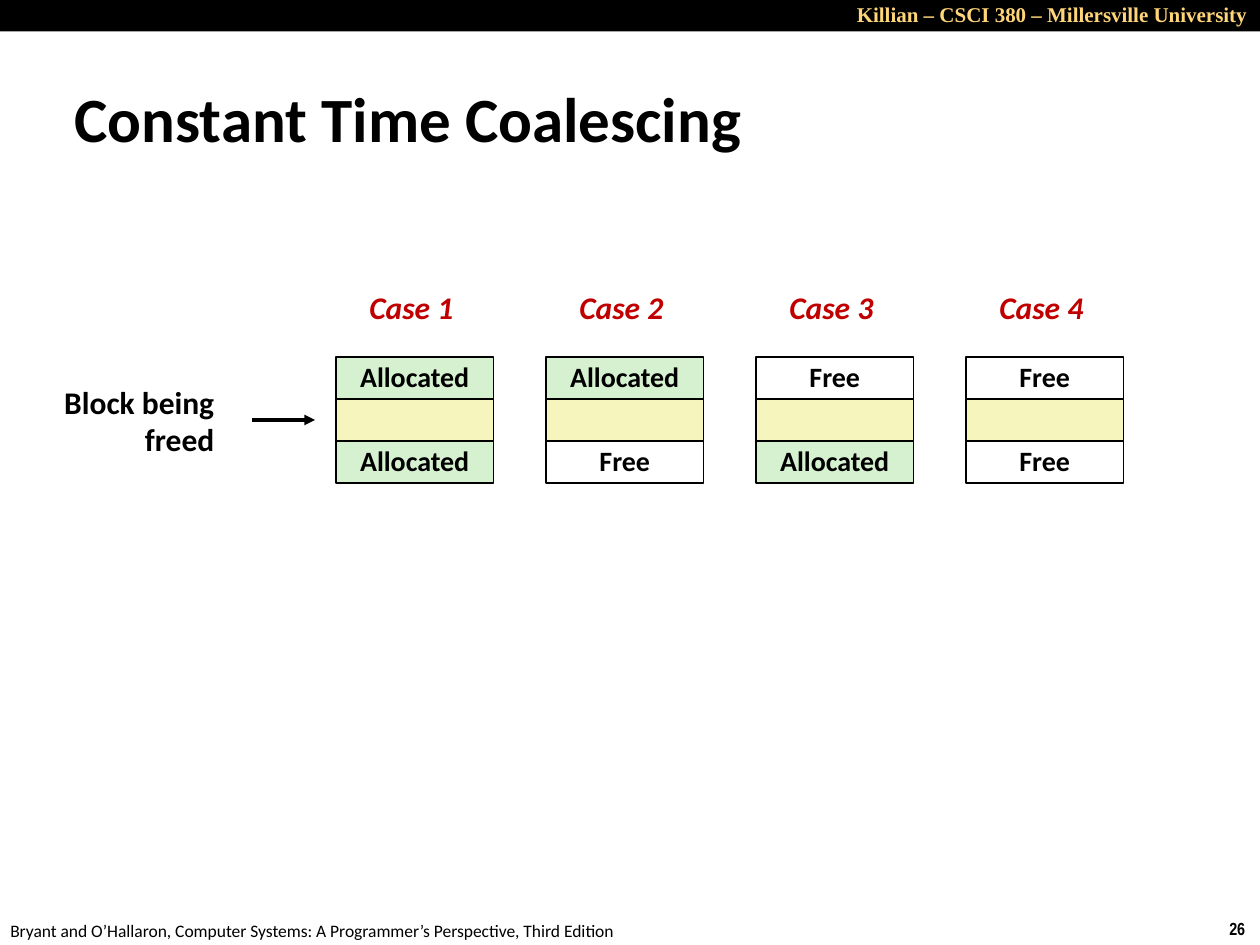
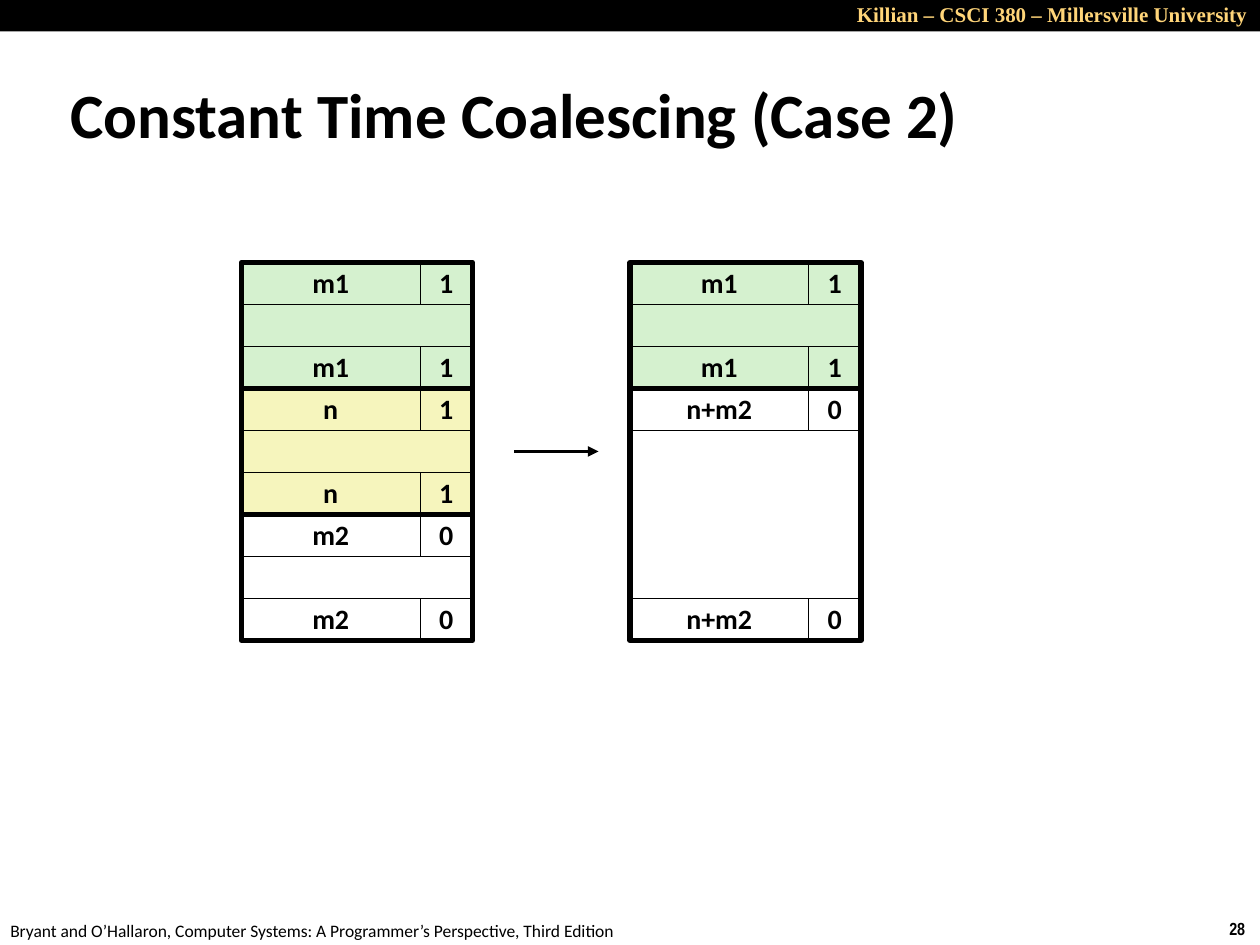
from lxml import etree
from pptx import Presentation, util as u
from pptx.dml.color import RGBColor
from pptx.enum import shapes, text
from pptx.oxml import ns

W, H = u.Inches(10), u.Inches(7.5)
COLS, ROWS = 120, 90
BLACK, WHITE = "000000", "FFFFFF"
GOLD, RED = "FFD579", "C00000"
GREEN, YELLOW = "D5F1CF", "F6F5BD"
FONT = "Calibri"
LEFT, CENTER, RIGHT = text.PP_ALIGN.LEFT, text.PP_ALIGN.CENTER, text.PP_ALIGN.RIGHT
ROW_H = 4
LABEL_W, FLAG_W = 17, 5
BLOCK_W = LABEL_W + FLAG_W
STATE_FILL = {"Allocated": GREEN, "Free": WHITE, "": YELLOW}


def rgb(color):
    return RGBColor.from_string(color)


def grid(col, row, cols, rows):
    return [round(v) for v in (col * W / COLS, row * H / ROWS, cols * W / COLS, rows * H / ROWS)]


def write(tf, lines, size, color=BLACK, align=LEFT, font=FONT, bold=True,
          italic=False, spacing=None):
    for i, line in enumerate(lines):
        p = tf.add_paragraph() if i else tf.paragraphs[0]
        p.alignment = align
        if spacing:
            p.line_spacing = spacing
        r = p.add_run()
        r.text = line
        r.font.name, r.font.size = font, u.Pt(size)
        r.font.bold, r.font.italic = bold, italic
        r.font.color.rgb = rgb(color)


def label(s, area, lines, size, wrap=False, **style):
    tf = s.shapes.add_textbox(*grid(*area)).text_frame
    tf.word_wrap = wrap
    write(tf, lines, size, **style)


def box(s, area, fill=None, line=None, caption=""):
    sp = s.shapes.add_shape(shapes.MSO_SHAPE.RECTANGLE, *grid(*area))
    sp.shadow.inherit = False
    if fill:
        sp.fill.solid()
        sp.fill.fore_color.rgb = rgb(fill)
    else:
        sp.fill.background()
    if line:
        sp.line.color.rgb = rgb(BLACK)
        sp.line.width = u.Pt(line)
    else:
        sp.line.fill.background()
    if caption:
        tf = sp.text_frame
        tf.word_wrap = False
        tf.vertical_anchor = text.MSO_ANCHOR.MIDDLE
        write(tf, [caption], 16, align=CENTER, spacing=0.98)


def arrow(s, col, row, cols):
    x, y, dx, _ = grid(col, row, cols, 0)
    c = s.shapes.add_connector(shapes.MSO_CONNECTOR.STRAIGHT, x, y, x + dx, y)
    c.line.color.rgb = rgb(BLACK)
    c.line.width = u.Pt(2)
    etree.SubElement(c.line._get_or_add_ln(), ns.qn("a:tailEnd"), type="triangle")
    etree.SubElement(c._element.spPr, ns.qn("a:effectLst"))


def new_slide(prs, title, title_area, number):
    s = prs.slides.add_slide(prs.slide_layouts[5])
    sp = s.shapes.title
    sp.left, sp.top, sp.width, sp.height = grid(*title_area)
    tf = sp.text_frame
    tf.word_wrap = True
    tf.auto_size = text.MSO_AUTO_SIZE.NONE
    tf.vertical_anchor = text.MSO_ANCHOR.MIDDLE
    write(tf, [title], 36)
    box(s, (0, 0, COLS, 3), BLACK)
    label(s, (73, -0.4, 47, 3.6), ["Killian – CSCI 380 – Millersville University"], 12,
          wrap=True, color=GOLD, align=RIGHT, font="Times New Roman")
    label(s, (115.9, 86.8, 4.1, 3.2), [str(number)], 10, font="Arial Narrow")
    label(s, (-0.2, 87, 61, 3.2),
          ["Bryant and O’Hallaron, Computer Systems: A Programmer’s Perspective, Third Edition"],
          10, bold=False)
    return s


def case(s, number, before, after):
    col = 32 + 20 * (number - 1)
    label(s, (col + 2, 27, 10.4, 4.8), [f"Case {number}"], 18,
          color=RED, italic=True, spacing=0.98)
    for i, state in enumerate((before, "", after)):
        box(s, (col, 34 + i * ROW_H, 15, ROW_H), STATE_FILL[state], 1, state)


def block(s, col, row, size, flag, fill, rows=3):
    for tag_row in (row, row + (rows - 1) * ROW_H):
        box(s, (col, tag_row, LABEL_W, ROW_H), fill, 0.25, size)
        box(s, (col + LABEL_W, tag_row, FLAG_W, ROW_H), fill, 0.25, flag)
    box(s, (col, row + ROW_H, BLOCK_W, (rows - 2) * ROW_H), fill, 0.25)
    box(s, (col, row, BLOCK_W, rows * ROW_H), line=3)


def heap(s, col, blocks):
    row = 25
    for size, flag, fill, rows in blocks:
        block(s, col, row, size, flag, fill, rows)
        row += rows * ROW_H


def main():
    prs = Presentation()
    prs.slide_width, prs.slide_height = W, H

    s = new_slide(prs, "Constant Time Coalescing", (5.9, 7.4, 92.2, 7.6), 26)
    neighbours = [("Allocated", "Allocated"), ("Allocated", "Free"),
                  ("Free", "Allocated"), ("Free", "Free")]
    for number, (before, after) in enumerate(neighbours, 1):
        case(s, number, before, after)
    label(s, (4.8, 36.1, 16.8, 8.4), ["Block being", "freed"], 18, align=RIGHT, spacing=0.98)
    arrow(s, 24, 40, 6)

    s = new_slide(prs, "Constant Time Coalescing (Case 2)", (5.5, 7, 109, 7.6), 28)
    heap(s, 23, [("m1", "1", GREEN, 3), ("n", "1", YELLOW, 3), ("m2", "0", WHITE, 3)])
    heap(s, 60, [("m1", "1", GREEN, 3), ("n+m2", "0", WHITE, 6)])
    arrow(s, 49, 43, 8)

    prs.save("out.pptx")


if __name__ == "__main__":
    main()
